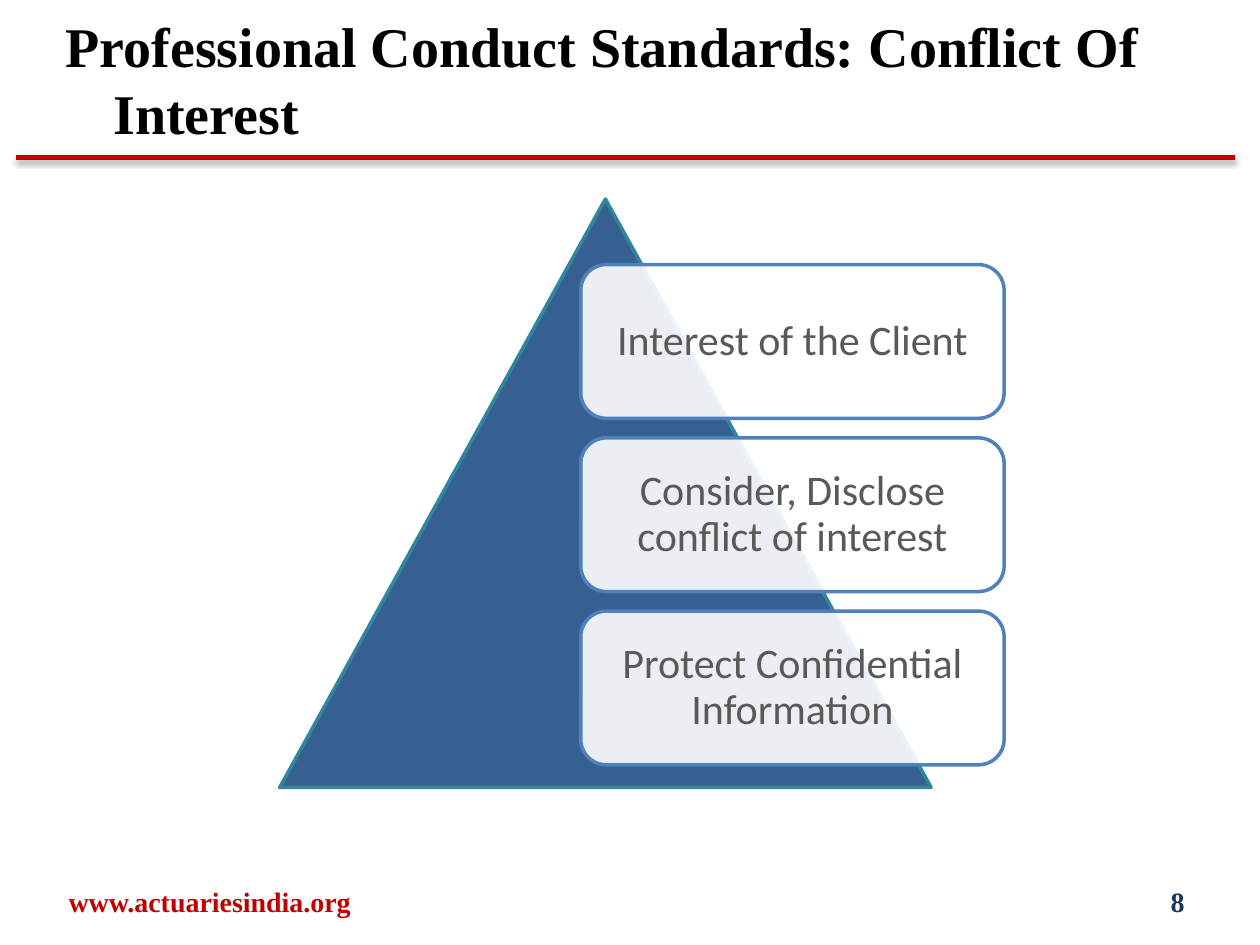
"""Build the conflict of interest slide with its pyramid of three duties."""
from dataclasses import dataclass

from lxml import etree
from pptx import Presentation
from pptx.dml.color import RGBColor
from pptx.enum.shapes import MSO_CONNECTOR, MSO_SHAPE
from pptx.enum.text import MSO_ANCHOR, MSO_AUTO_SIZE, PP_ALIGN
from pptx.oxml import parse_xml
from pptx.oxml.ns import nsdecls, qn
from pptx.util import Inches, Pt

STRAIGHT = MSO_CONNECTOR.STRAIGHT
TRIANGLE = MSO_SHAPE.ISOSCELES_TRIANGLE
ROUNDED = MSO_SHAPE.ROUNDED_RECTANGLE
LEFT, CENTER, RIGHT = PP_ALIGN.LEFT, PP_ALIGN.CENTER, PP_ALIGN.RIGHT
MIDDLE = MSO_ANCHOR.MIDDLE
NO_AUTOFIT = MSO_AUTO_SIZE.NONE


@dataclass(frozen=True)
class Theme:
    serif: str = "Times New Roman"
    sans: str = "Calibri"
    title_size: int = 32
    duty_size: int = 24
    footer_size: int = 16
    black: str = "000000"
    white: str = "FFFFFF"
    red: str = "C00000"
    navy: str = "17375E"
    grey: str = "595959"
    pyramid: str = "376092"
    pyramid_edge: str = "31859C"
    duty_edge: str = "4F81BD"


theme = Theme()


def write(frame, text, font, size, color, bold=False, align=LEFT, spacing=None, inset=None):
    """Put formatted text in a text frame and return its paragraph."""
    frame.word_wrap = True
    frame.auto_size = NO_AUTOFIT
    frame.vertical_anchor = MIDDLE
    if inset is not None:
        frame.margin_left = frame.margin_right = inset
        frame.margin_top = frame.margin_bottom = inset
    paragraph = frame.paragraphs[0]
    paragraph.alignment = align
    paragraph.space_before = Pt(0)
    if spacing:
        paragraph.line_spacing = spacing
    run = paragraph.add_run()
    run.text = text
    run.font.name = font
    run.font.size = Pt(size)
    run.font.bold = bold
    run.font.color.rgb = RGBColor.from_string(color)
    return paragraph


def add_figure(kind, left, top, width, height, fill, edge):
    """Add a flat preset shape with a fill and a two-point outline."""
    figure = slide.shapes.add_shape(kind, Inches(left), Inches(top), Inches(width), Inches(height))
    figure.shadow.inherit = False
    figure.fill.solid()
    figure.fill.fore_color.rgb = RGBColor.from_string(fill)
    figure.line.color.rgb = RGBColor.from_string(edge)
    figure.line.width = Pt(2)
    return figure


prs = Presentation()
prs.slide_width, prs.slide_height = Inches(10), Inches(7.5)
slide = prs.slides.add_slide(prs.slide_layouts[5])

heading = slide.shapes.title
heading.left, heading.top = Inches(0.42), Inches(0)
heading.width, heading.height = Inches(9), Inches(1.25)
heading_line = write(heading.text_frame, "Professional Conduct Standards: Conflict Of Interest",
                     theme.serif, theme.title_size, theme.black, bold=True)
hanging = heading_line._p.get_or_add_pPr()
hanging.set("marL", str(Inches(0.38)))
hanging.set("indent", str(-Inches(0.38)))

rule = slide.shapes.add_connector(STRAIGHT, Inches(0.13), Inches(1.25), Inches(9.8), Inches(1.25))
rule.line.color.rgb = RGBColor.from_string(theme.red)
rule.line.width = Pt(3)
rule._element.spPr.append(parse_xml(
    f'<a:effectLst {nsdecls("a")}><a:outerShdw blurRad="{Pt(3.1)}" dist="{Pt(1.6)}" dir="5400000" '
    f'rotWithShape="0"><a:srgbClr val="{theme.black}"><a:alpha val="38000"/></a:srgbClr>'
    '</a:outerShdw></a:effectLst>'))

add_figure(TRIANGLE, 2.22, 1.58, 5.17, 4.67, theme.pyramid, theme.pyramid_edge)

duties = ["Interest of the Client", "Consider, Disclose conflict of interest",
          "Protect Confidential Information"]
DUTY_TOP, DUTY_PITCH = 2.1, 1.375
for row, duty in enumerate(duties):
    card = add_figure(ROUNDED, 4.61, DUTY_TOP + row * DUTY_PITCH, 3.36, 1.22,
                      theme.white, theme.duty_edge)
    tint = card.fill._xPr.find(qn("a:solidFill")).find(qn("a:srgbClr"))
    etree.SubElement(tint, qn("a:alpha")).set("val", "90000")
    write(card.text_frame, duty, theme.sans, theme.duty_size, theme.grey,
          align=CENTER, spacing=0.9, inset=Inches(0.1))

footers = [("www.actuariesindia.org", 0.08, 3.17, theme.red, CENTER),
           ("8", 7.17, 2.33, theme.navy, RIGHT)]
for text, left, width, color, align in footers:
    footer = slide.shapes.add_textbox(Inches(left), Inches(6.95), Inches(width), Inches(0.4))
    write(footer.text_frame, text, theme.serif, theme.footer_size, color, bold=True, align=align)

prs.save("out.pptx")
